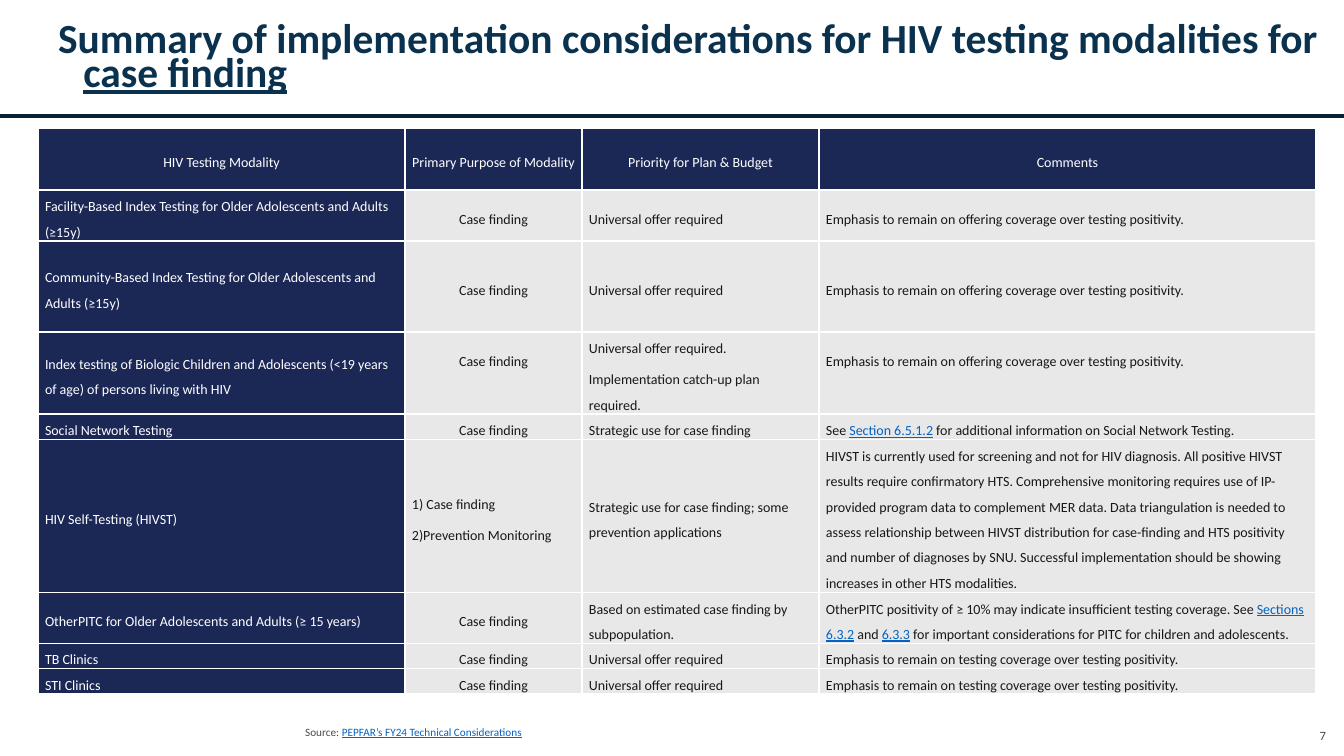
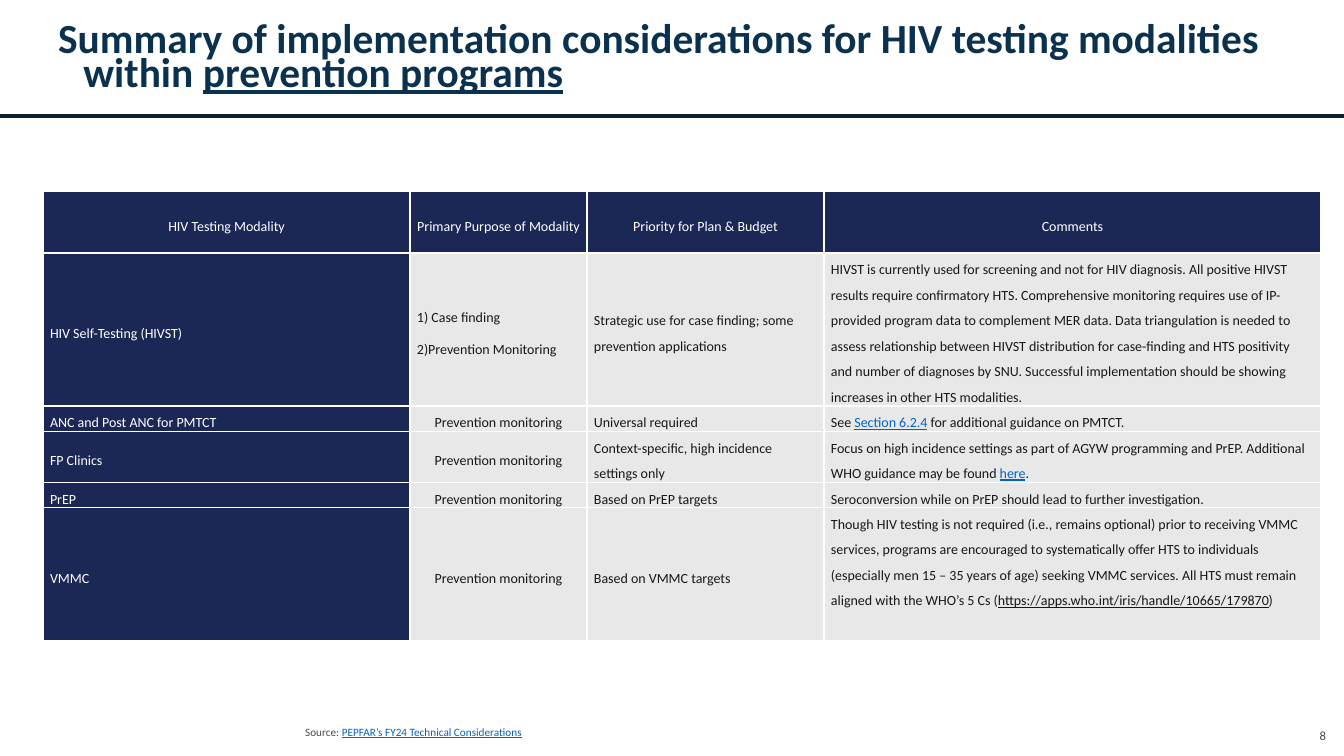
from dataclasses import dataclass

import pptx
import pptx.dml.color
import pptx.enum.shapes
import pptx.enum.text
import pptx.oxml
import pptx.oxml.ns
import pptx.util
from pptx.enum.text import MSO_ANCHOR, PP_ALIGN

EMU_PER_PX = 914400 / 100.8
SLIDE_W, SLIDE_H = 1344, 756
FONT = "Calibri"
COLORS = {
    "title": "0A314D",
    "rule": "0A2134",
    "navy": "1B2755",
    "cell": "E8E8E9",
    "white": "FFFFFF",
    "body": "16181A",
    "muted": "494949",
    "link": "0563C1",
}
COLUMN_WIDTHS = (367, 177, 237, 497)
HEADERS = ("HIV Testing Modality", "Primary Purpose of Modality",
           "Priority for Plan & Budget", "Comments")
HEADER_HEIGHT = 62
CELL_MARGIN = 7
RULE_Y = 116


@dataclass(frozen=True)
class Run:
    text: str
    color: str | None = None
    underline: bool | None = None


@dataclass(frozen=True)
class Cell:
    """Paragraphs of runs, with optional space kept free below the text."""
    paras: tuple[tuple[Run, ...], ...]
    gap: int = 0


@dataclass(frozen=True)
class Row:
    height: int
    modality: str
    purpose: Cell
    priority: Cell
    comments: Cell


@dataclass(frozen=True)
class Page:
    number: int
    title: tuple[Run, ...]
    table_left: int
    table_top: int
    rows: tuple[Row, ...]


def link(text: str) -> Run:
    return Run(text, "link", True)


def lines(*texts: str, gap: int = 0) -> Cell:
    """A cell with one plain paragraph per text."""
    return Cell(tuple((Run(t),) for t in texts), gap)


def mixed(*parts: str | Run, gap: int = 0) -> Cell:
    """A cell with one paragraph of plain and styled parts."""
    return Cell((tuple(Run(t) if isinstance(t, str) else t for t in parts),), gap)


BLANK_LINE = 31
CASE_FINDING = lines("Case finding")
PREVENTION = lines("Prevention monitoring")
UNIVERSAL = lines("Universal offer required")
OFFERING = "Emphasis to remain on offering coverage over testing positivity."
COVERAGE = lines("Emphasis to remain on testing coverage over testing positivity.")
SELF_TESTING = Row(
    153, "HIV Self-Testing (HIVST)",
    lines("1) Case finding", "2)Prevention Monitoring"),
    lines("Strategic use for case finding; some prevention applications"),
    lines("HIVST is currently used for screening and not for HIV diagnosis. All positive "
          "HIVST results require confirmatory HTS. Comprehensive monitoring requires use of "
          "IP-provided program data to complement MER data. Data triangulation is needed to "
          "assess relationship between HIVST distribution for case-finding and HTS positivity "
          "and number of diagnoses by SNU. Successful implementation should be showing "
          "increases in other HTS modalities."))

CASE_FINDING_ROWS = (
    Row(51, "Facility-Based Index Testing for Older Adolescents and Adults (≥15y)",
        CASE_FINDING, UNIVERSAL, lines(OFFERING)),
    Row(91, "Community-Based Index Testing for Older Adolescents and Adults (≥15y)",
        CASE_FINDING, UNIVERSAL, lines(OFFERING)),
    Row(82, "Index testing of Biologic Children and Adolescents (<19 years of age) "
            "of persons living with HIV",
        lines("Case finding", gap=BLANK_LINE),
        lines("Universal offer required.", "Implementation catch-up plan required."),
        lines(OFFERING, gap=BLANK_LINE)),
    Row(25, "Social Network Testing", CASE_FINDING,
        lines("Strategic use for case finding"),
        mixed("See ", link("Section 6.5.1.2"),
              " for additional information on Social Network Testing.")),
    SELF_TESTING,
    Row(51, "OtherPITC for Older Adolescents and Adults (≥ 15 years)", CASE_FINDING,
        lines("Based on estimated case finding by subpopulation."),
        mixed("OtherPITC positivity of ≥ 10% may indicate insufficient testing coverage. See ",
              link("Sections 6.3.2"), " and ", link("6.3.3"),
              " for important considerations for PITC for children and adolescents.")),
    Row(25, "TB Clinics", CASE_FINDING, UNIVERSAL, COVERAGE),
    Row(25, "STI Clinics", CASE_FINDING, UNIVERSAL, COVERAGE),
)
PREVENTION_ROWS = (
    SELF_TESTING,
    Row(25, "ANC and Post ANC for PMTCT", PREVENTION, lines("Universal required"),
        mixed("See ", link("Section 6.2.4"), " for additional guidance on PMTCT.")),
    Row(51, "FP Clinics", PREVENTION,
        lines("Context-specific, high incidence settings only"),
        mixed("Focus on high incidence settings as part of AGYW programming and PrEP. "
              "Additional WHO guidance may be found ", link("here"), ".")),
    Row(25, "PrEP", PREVENTION, lines("Based on PrEP targets"),
        lines("Seroconversion while on PrEP should lead to further investigation.")),
    Row(133, "VMMC", PREVENTION, lines("Based on VMMC targets"),
        mixed("Though HIV testing is not required (i.e., remains optional) prior to receiving "
              "VMMC services, programs are encouraged to systematically offer HTS to "
              "individuals (especially men 15 – 35 years of age) seeking VMMC services. All "
              "HTS must remain aligned with the WHO’s 5 Cs (",
              Run("https://apps.who.int/iris/handle/10665/179870", underline=True), ")",
              gap=BLANK_LINE)),
)
TITLE_START = "Summary of implementation considerations for HIV testing modalities "
PAGES = (
    Page(7, (Run(TITLE_START + "for "), Run("case finding", underline=True)),
         38, 128, CASE_FINDING_ROWS),
    Page(8, (Run(TITLE_START + "within "), Run("prevention programs", underline=True)),
         43, 191, PREVENTION_ROWS),
)
SOURCE = (Run("Source: "), link("PEPFAR’s FY24 Technical Considerations"))


def px(n: int) -> pptx.util.Emu:
    return pptx.util.Emu(round(n * EMU_PER_PX))


def rgb(name: str) -> pptx.dml.color.RGBColor:
    return pptx.dml.color.RGBColor.from_string(COLORS[name])


def write(p, runs: tuple[Run, ...], size: float, color: str, bold: bool = False) -> None:
    """Fill a paragraph with runs in one base style."""
    p.font.name, p.font.size, p.font.bold = FONT, pptx.util.Pt(size), bold
    p.font.color.rgb = rgb(color)
    for run in runs:
        r = p.add_run()
        r.text = run.text
        r.font.underline = run.underline
        if run.color:
            r.font.color.rgb = rgb(run.color)


def add_text(s, box: tuple[int, int, int, int], anchor: MSO_ANCHOR):
    """Add an empty text box without margins and return its first paragraph."""
    tf = s.shapes.add_textbox(*map(px, box)).text_frame
    tf.word_wrap = True
    tf.vertical_anchor = anchor
    tf.margin_left = tf.margin_right = tf.margin_top = tf.margin_bottom = 0
    return tf.paragraphs[0]


def hang(p, line_spacing: float) -> None:
    """Give a paragraph a hanging indent."""
    pPr = p._p.get_or_add_pPr()
    pPr.set("marL", str(pptx.util.Inches(0.5)))
    pPr.set("indent", str(pptx.util.Inches(-0.25)))
    p.line_spacing = line_spacing


def add_frame(s, page: Page) -> None:
    """Draw the title, rule, source line and page number."""
    rule = s.shapes.add_connector(pptx.enum.shapes.MSO_CONNECTOR.STRAIGHT,
                                  0, px(RULE_Y), px(SLIDE_W), px(RULE_Y))
    rule.line.color.rgb = rgb("rule")
    rule.line.width = pptx.util.Pt(2.25)
    rule._element.spPr.append(pptx.oxml.parse_xml(
        f"<a:effectLst {pptx.oxml.ns.nsdecls('a')}/>"))

    p = add_text(s, (33, 17, 1288, 86), MSO_ANCHOR.MIDDLE)
    hang(p, 0.7)
    write(p, page.title, 29.6, "title", bold=True)

    p = add_text(s, (280, 671, 853, 68), MSO_ANCHOR.BOTTOM)
    hang(p, 0.9)
    write(p, SOURCE, 8, "muted")

    p = add_text(s, (1271, 716, 55, 40), MSO_ANCHOR.MIDDLE)
    p.alignment = PP_ALIGN.RIGHT
    write(p, (Run(str(page.number)),), 9, "muted")


def fill_cell(cell, content: Cell, dark: bool, centered: bool) -> None:
    cell.fill.solid()
    cell.fill.fore_color.rgb = rgb("navy" if dark else "cell")
    cell.vertical_anchor = MSO_ANCHOR.MIDDLE
    cell.margin_left = cell.margin_right = px(CELL_MARGIN)
    cell.margin_top, cell.margin_bottom = 0, px(content.gap)
    tf = cell.text_frame
    for i, runs in enumerate(content.paras):
        p = tf.add_paragraph() if i else tf.paragraphs[0]
        p.alignment = PP_ALIGN.CENTER if centered else PP_ALIGN.LEFT
        p.line_spacing = 1.5
        p.space_after = pptx.util.Pt(4)
        write(p, runs, 10, "white" if dark else "body")


def add_modalities(s, page: Page) -> None:
    heights = [HEADER_HEIGHT] + [row.height for row in page.rows]
    table = s.shapes.add_table(
        len(heights), len(COLUMN_WIDTHS), px(page.table_left), px(page.table_top),
        px(sum(COLUMN_WIDTHS)), px(sum(heights))).table
    table.first_row = table.horz_banding = False
    for column, width in zip(table.columns, COLUMN_WIDTHS):
        column.width = px(width)
    for table_row, height in zip(table.rows, heights):
        table_row.height = px(height)
    for c, header in enumerate(HEADERS):
        fill_cell(table.cell(0, c), lines(header), dark=True, centered=True)
    for r, row in enumerate(page.rows, start=1):
        contents = (lines(row.modality), row.purpose, row.priority, row.comments)
        for c, content in enumerate(contents):
            fill_cell(table.cell(r, c), content, dark=c == 0,
                      centered=c == 1 and len(content.paras) == 1)


def main() -> None:
    prs = pptx.Presentation()
    prs.slide_width, prs.slide_height = px(SLIDE_W), px(SLIDE_H)
    for page in PAGES:
        s = prs.slides.add_slide(prs.slide_layouts[6])
        add_frame(s, page)
        add_modalities(s, page)
    prs.save("out.pptx")


if __name__ == "__main__":
    main()
